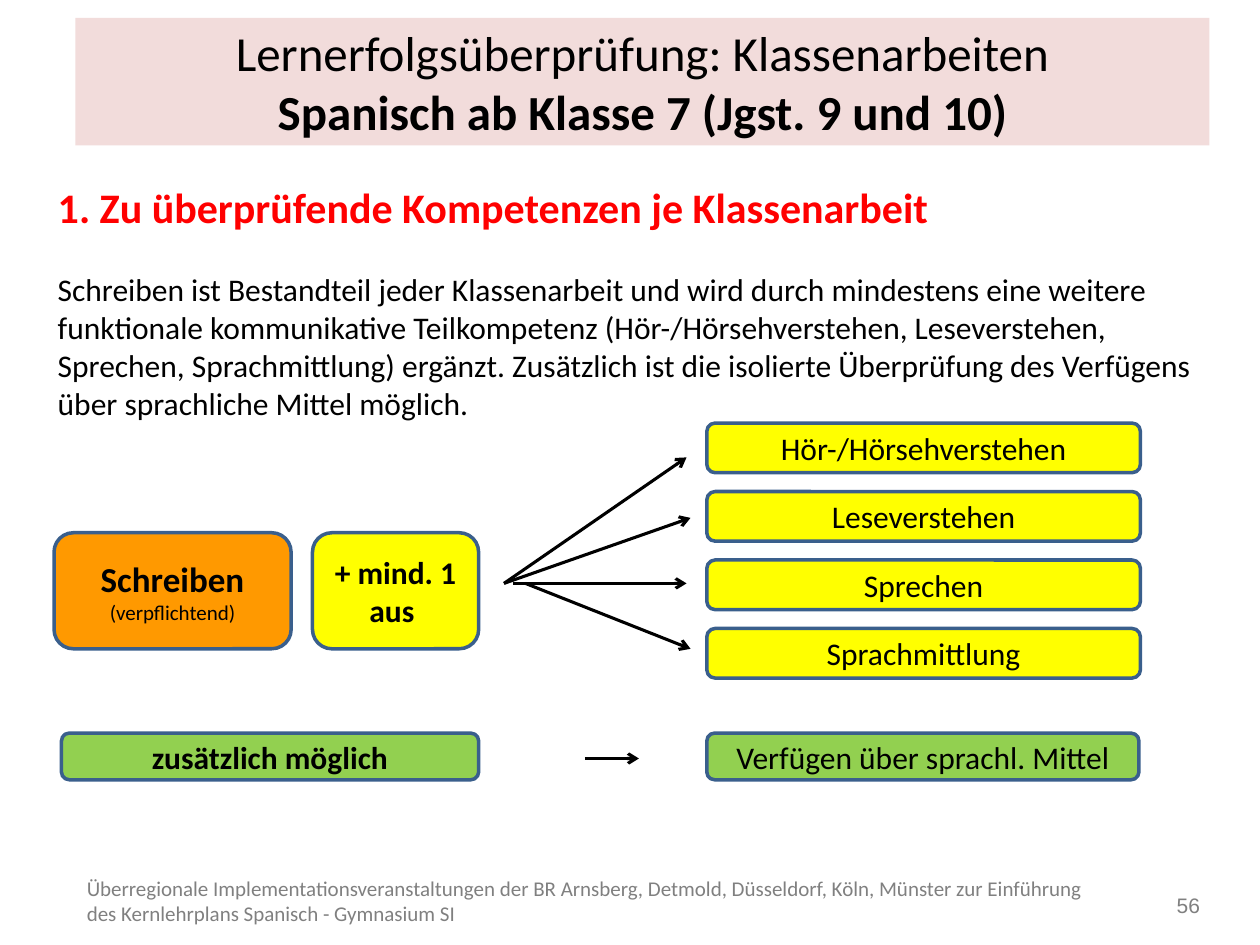
from pptx import Presentation
from pptx import util as u
from pptx.dml.color import RGBColor
from pptx.enum import shapes, text
from pptx.oxml.ns import qn
from lxml import etree

COLORS = {"black": "000000", "red": "FF0000", "gray": "808080", "pink": "F2DCDB",
          "yellow": "FFFF00", "orange": "FF9900", "green": "92D050", "border": "3A5F8C"}


def format_text(paragraph, size, color="black", bold=False, font="Calibri"):
    for run in paragraph.runs:
        run.font.name = font
        run.font.size = u.Pt(size)
        run.font.bold = bold
        run.font.color.rgb = RGBColor.from_string(COLORS[color])


def place(shape, left, top, width, height):
    shape.left, shape.top = u.Cm(left), u.Cm(top)
    shape.width, shape.height = u.Cm(width), u.Cm(height)


presentation = Presentation()
presentation.slide_width, presentation.slide_height = u.Cm(25.4), u.Cm(19.05)
slide = presentation.slides.add_slide(presentation.slide_layouts[1])

# Title
title = slide.shapes.title
place(title, 1.52, 0.36, 22.86, 2.57)
title.fill.solid()
title.fill.fore_color.rgb = RGBColor.from_string(COLORS["pink"])
title.text_frame.text = "Lernerfolgsüberprüfung: Klassenarbeiten\vSpanisch ab Klasse 7 (Jgst. 9 und 10)"
title.text_frame.auto_size = text.MSO_AUTO_SIZE.NONE
format_text(title.text_frame.paragraphs[0], 28)
title.text_frame.paragraphs[0].runs[1].font.bold = True

# Heading and explanation
body = slide.placeholders[1]
place(body, 0.91, 3.53, 23.44, 5.13)
body.text_frame.text = (
    "1. Zu überprüfende Kompetenzen je Klassenarbeit\n"
    "Schreiben ist Bestandteil jeder Klassenarbeit und wird durch mindestens eine weitere "
    "funktionale kommunikative Teilkompetenz (Hör-/Hörsehverstehen, Leseverstehen, Sprechen, "
    "Sprachmittlung) ergänzt. Zusätzlich ist die isolierte Überprüfung des Verfügens über "
    "sprachliche Mittel möglich.")
body.text_frame.auto_size = text.MSO_AUTO_SIZE.NONE
heading, explanation = body.text_frame.paragraphs
for paragraph, space in ((heading, 0), (explanation, 22)):
    properties = paragraph._p.get_or_add_pPr()
    properties.set("marL", "0")
    properties.set("indent", "0")
    etree.SubElement(properties, qn("a:buNone"))
    paragraph.space_before = u.Pt(space)
format_text(heading, 24, "red", bold=True)
format_text(explanation, 18)

# Boxes: text, fill, bold, first text size, left, top, width, height
boxes = [
    ("Schreiben\n(verpflichtend)", "orange", True, 20, 1.09, 10.74, 4.78, 2.34),
    ("+ mind. 1 aus ", "yellow", True, 18, 6.3, 10.74, 3.35, 2.34),
    ("zusätzlich möglich", "green", True, 18, 1.24, 14.78, 8.41, 0.94),
    ("Verfügen über sprachl. Mittel", "green", False, 18, 14.25, 14.78, 8.71, 0.94),
]
skills = ["Hör-/Hörsehverstehen", "Leseverstehen", "Sprechen", "Sprachmittlung"]
for index, skill in enumerate(skills):
    boxes.append((skill, "yellow", False, 18, 14.25, 8.53 + 1.38 * index, 8.74, 1))

for label, fill, bold, size, *position in boxes:
    box = slide.shapes.add_shape(shapes.MSO_SHAPE.ROUNDED_RECTANGLE, 0, 0, 0, 0)
    place(box, *position)
    box.shadow.inherit = False
    box.fill.solid()
    box.fill.fore_color.rgb = RGBColor.from_string(COLORS[fill])
    box.line.color.rgb = RGBColor.from_string(COLORS["border"])
    box.line.width = u.Pt(2)
    box.text_frame.text = label
    box.text_frame.vertical_anchor = text.MSO_ANCHOR.MIDDLE
    for index, paragraph in enumerate(box.text_frame.paragraphs):
        paragraph.alignment = text.PP_ALIGN.CENTER
        format_text(paragraph, 12 if index else size, bold=bold and index == 0)

# Arrows: start x, start y, end x, end y
arrows = [(10.16, 11.76, 13.84, 9.22), (10.16, 11.76, 13.92, 10.44),
          (10.34, 11.76, 13.84, 11.76), (10.59, 11.76, 13.92, 13.08),
          (11.79, 15.29, 12.88, 15.29)]
for points in arrows:
    arrow = slide.shapes.add_connector(shapes.MSO_CONNECTOR.STRAIGHT, *map(u.Cm, points))
    arrow.line.color.rgb = RGBColor.from_string(COLORS["black"])
    arrow.line.width = u.Pt(1.75)
    etree.SubElement(arrow.line._get_or_add_ln(), qn("a:tailEnd"), type="arrow")
    etree.SubElement(arrow._element.spPr, qn("a:effectLst"))

# Footer and slide number
footer = ("Überregionale Implementationsveranstaltungen der BR Arnsberg, Detmold, Düsseldorf, Köln, "
          "Münster zur Einführung des Kernlehrplans Spanisch - Gymnasium SI")
for label, font, *position in ((footer, "Calibri", 1.5, 17.65, 21, 1.02),
                               ("56", "Arial", 23.47, 17.73, 1.8, 1.02)):
    note = slide.shapes.add_textbox(0, 0, 0, 0)
    place(note, *position)
    note.text_frame.word_wrap = True
    note.text_frame.vertical_anchor = text.MSO_ANCHOR.MIDDLE
    note.text_frame.text = label
    format_text(note.text_frame.paragraphs[0], 12, "gray", font=font)

presentation.save("out.pptx")
